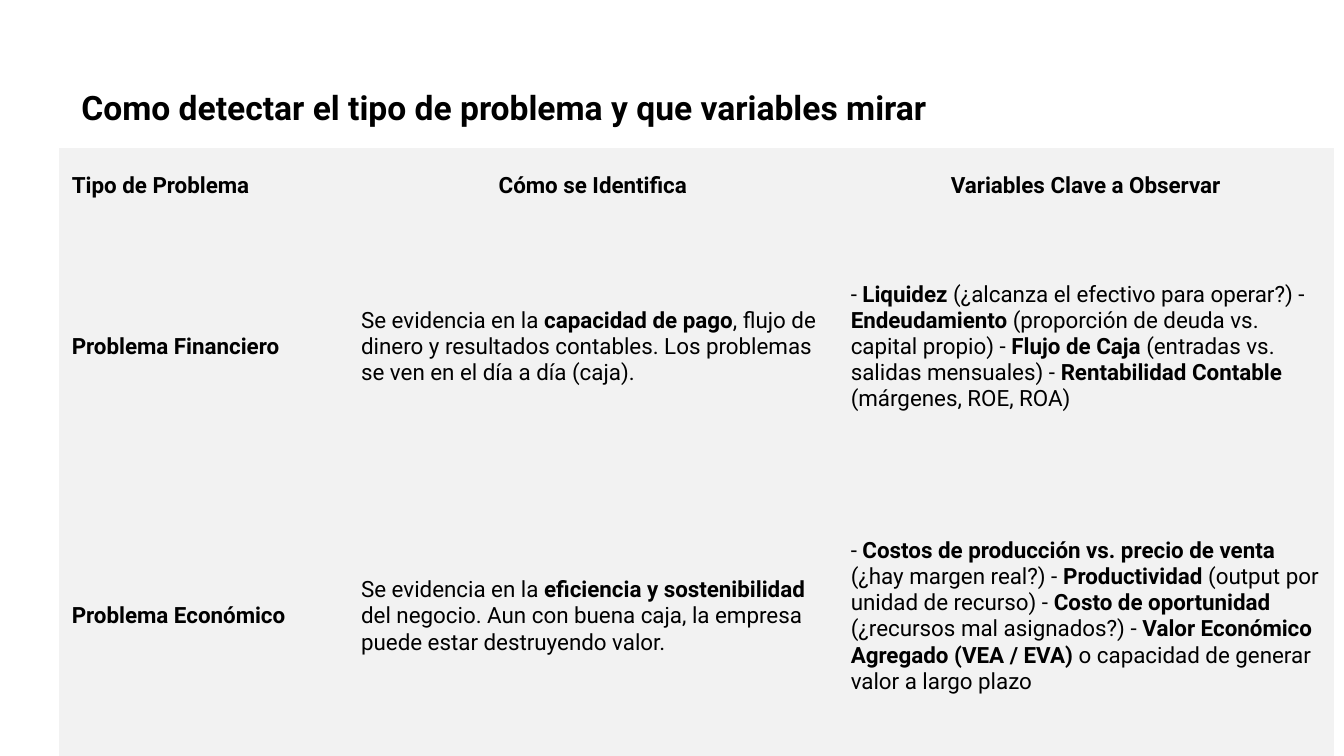
from pptx import Presentation
from pptx.dml.color import RGBColor
from pptx.enum import text
from pptx.util import Cm, Pt

# Content: ** switches bold on and off
HEADING = "**Como detectar el tipo de problema y que variables mirar**"
PROBLEMS = [
    ("**Tipo de Problema**", "**Cómo se Identifica**", "**Variables Clave a Observar**"),
    (
        "**Problema Financiero**",
        "Se evidencia en la **capacidad de pago**, flujo de dinero y resultados "
        "contables. Los problemas se ven en el día a día (caja).",
        "- **Liquidez** (¿alcanza el efectivo para operar?) - **Endeudamiento** "
        "(proporción de deuda vs. capital propio) - **Flujo de Caja** (entradas vs. "
        "salidas mensuales) - **Rentabilidad Contable** (márgenes, ROE, ROA)",
    ),
    (
        "**Problema Económico**",
        "Se evidencia en la **eficiencia y sostenibilidad** del negocio. Aun con "
        "buena caja, la empresa puede estar destruyendo valor.",
        "- **Costos de producción vs. precio de venta** (¿hay margen real?) - "
        "**Productividad** (output por unidad de recurso) - **Costo de oportunidad** "
        "(¿recursos mal asignados?) - **Valor Económico Agregado (VEA / EVA)** "
        "o capacidad de generar valor a largo plazo",
    ),
]

# Layout and look
COLUMN_WIDTHS = [Cm(7.29), Cm(12.34), Cm(12.5)]
ROW_HEIGHTS = [Cm(1.73), Cm(6.38), Cm(7.19)]
BLACK = RGBColor(0x00, 0x00, 0x00)
LIGHT_GREY = RGBColor(0xF2, 0xF2, 0xF2)
FONT = "Roboto"
NO_STYLE_NO_GRID = "{2D5ABB26-0587-4C30-8999-92F81FD0307C}"


def add_runs(paragraph, marked, size):
    for i, part in enumerate(marked.split("**")):
        if part:
            run = paragraph.add_run()
            run.text = part
            run.font.name = FONT
            run.font.size = Pt(size)
            run.font.bold = i % 2 == 1
            run.font.color.rgb = BLACK


prs = Presentation()
prs.slide_width, prs.slide_height = Cm(33.87), Cm(19.05)
slide = prs.slides.add_slide(prs.slide_layouts[6])

# Heading
heading = slide.shapes.add_textbox(Cm(1.8), Cm(1.52), Cm(28.7), Cm(2.51)).text_frame
heading.word_wrap = True
heading.vertical_anchor = text.MSO_ANCHOR.MIDDLE
heading.paragraphs[0].line_spacing = 0.9
add_runs(heading.paragraphs[0], HEADING, 24)

# Table of problems
problems = slide.shapes.add_table(
    len(PROBLEMS), len(COLUMN_WIDTHS), Cm(1.48), Cm(3.74),
    sum(COLUMN_WIDTHS), sum(ROW_HEIGHTS),
).table
problems.first_row = problems.horz_banding = False
problems._tbl.tblPr[0].text = NO_STYLE_NO_GRID
for column, width in zip(problems.columns, COLUMN_WIDTHS):
    column.width = width
for row, height in zip(problems.rows, ROW_HEIGHTS):
    row.height = height

for r, problem in enumerate(PROBLEMS):
    for c, marked in enumerate(problem):
        cell = problems.cell(r, c)
        cell.fill.solid()
        cell.fill.fore_color.rgb = LIGHT_GREY
        cell.vertical_anchor = text.MSO_ANCHOR.MIDDLE
        cell.margin_left = cell.margin_top = cell.margin_right = Cm(0.33)
        cell.margin_bottom = Cm(0.16)
        paragraph = cell.text_frame.paragraphs[0]
        if r == 0 and c > 0:
            paragraph.alignment = text.PP_ALIGN.CENTER
        add_runs(paragraph, marked, 16)

prs.save("out.pptx")
